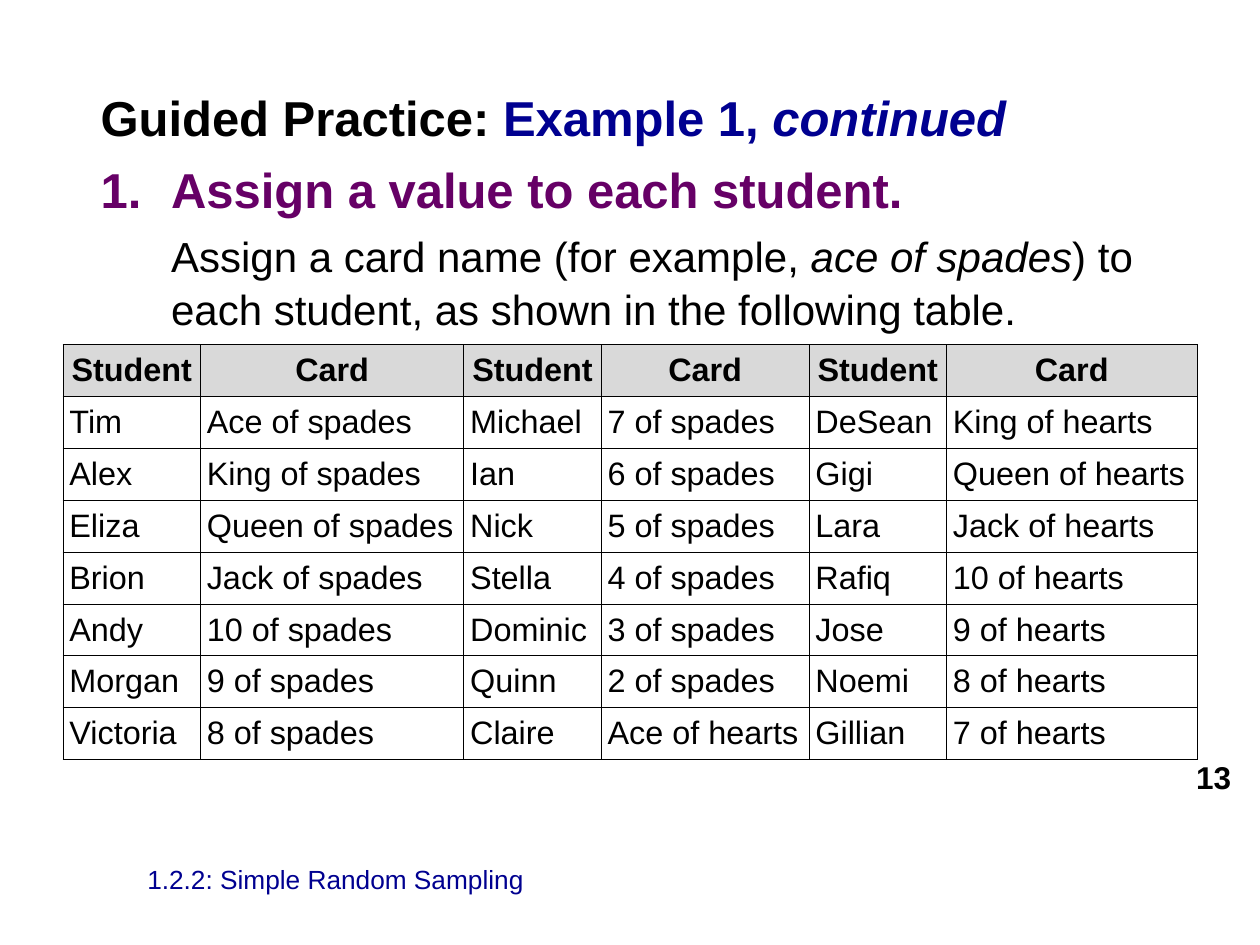
from dataclasses import dataclass

from lxml import etree
from pptx import Presentation
from pptx import util as u
from pptx.dml.color import RGBColor
from pptx.enum import text
from pptx.oxml import ns


@dataclass(frozen=True)
class Theme:
    font: str = "Arial"
    black: str = "000000"
    white: str = "FFFFFF"
    navy: str = "000090"
    purple: str = "660066"
    header_fill: str = "D9D9D9"
    heading_size: float = 28
    body_size: float = 24
    table_size: float = 18.5
    number_size: float = 18
    footer_size: float = 15
    border_width: float = 0.5


THEME = Theme()

COLUMN_WIDTHS = (2.77, 5.31, 2.77, 4.19, 2.77, 5.05)
ROW_HEIGHT = 1.04
CARD_ROWS = [
    ("Student", "Card") * 3,
    ("Tim", "Ace of spades", "Michael", "7 of spades", "DeSean", "King of hearts"),
    ("Alex", "King of spades", "Ian", "6 of spades", "Gigi", "Queen of hearts"),
    ("Eliza", "Queen of spades", "Nick", "5 of spades", "Lara", "Jack of hearts"),
    ("Brion", "Jack of spades", "Stella", "4 of spades", "Rafiq", "10 of hearts"),
    ("Andy", "10 of spades", "Dominic", "3 of spades", "Jose", "9 of hearts"),
    ("Morgan", "9 of spades", "Quinn", "2 of spades", "Noemi", "8 of hearts"),
    ("Victoria", "8 of spades", "Claire", "Ace of hearts", "Gillian", "7 of hearts"),
]


def style_font(font, size, color=THEME.black, bold=False, italic=False):
    font.name = THEME.font
    font.size = u.Pt(size)
    font.bold = bold
    font.italic = italic
    font.color.rgb = RGBColor.from_string(color)


def add_span(para, words, size, **style):
    span = para.add_run()
    span.text = words
    style_font(span.font, size, **style)


def add_box(page, left, top, width, height, anchor=text.MSO_ANCHOR.MIDDLE):
    box = page.shapes.add_textbox(u.Cm(left), u.Cm(top), u.Cm(width), u.Cm(height))
    box.text_frame.word_wrap = True
    box.text_frame.vertical_anchor = anchor
    return box.text_frame


def indent(para, margin, first_line=0.0, numbered=False):
    properties = para._p.get_or_add_pPr()
    properties.set("marL", str(u.Cm(margin)))
    properties.set("indent", str(u.Cm(first_line)))
    if numbered:
        bullet = etree.SubElement(properties, ns.qn("a:buAutoNum"))
        bullet.set("type", "arabicPeriod")


def add_lesson_text(page):
    frame = add_box(page, 1.78, 1.6, 21.82, 5.2, text.MSO_ANCHOR.TOP)
    title = frame.paragraphs[0]
    step, detail = frame.add_paragraph(), frame.add_paragraph()
    indent(step, 1.42, -1.42, numbered=True)
    indent(detail, 1.42)
    for para in (title, step, detail):
        para.line_spacing = 1.04
    for para in (step, detail):
        para.space_before = u.Pt(6)

    heading, body = THEME.heading_size, THEME.body_size
    add_span(title, "Guided Practice: ", heading, bold=True)
    add_span(title, "Example 1, ", heading, color=THEME.navy, bold=True)
    add_span(title, "continued", heading, color=THEME.navy, bold=True, italic=True)
    add_span(step, "Assign a value to each student.", heading,
             color=THEME.purple, bold=True)
    add_span(detail, "Assign a card name (for example, ", body)
    add_span(detail, "ace of spades", body, italic=True)
    add_span(detail, ") to each student, as shown in the following table.", body)


def border_cell(cell):
    """Draw a thin line on each side, placed ahead of the cell's fill."""
    properties = cell._tc.get_or_add_tcPr()
    for position, side in enumerate(("a:lnL", "a:lnR", "a:lnT", "a:lnB")):
        line = etree.Element(ns.qn(side), w=str(u.Pt(THEME.border_width)))
        fill = etree.SubElement(line, ns.qn("a:solidFill"))
        etree.SubElement(fill, ns.qn("a:srgbClr"), val=THEME.black)
        properties.insert(position, line)


def fill_cell(cell, words, is_header):
    cell.fill.solid()
    cell.fill.fore_color.rgb = RGBColor.from_string(
        THEME.header_fill if is_header else THEME.white)
    cell.vertical_anchor = text.MSO_ANCHOR.MIDDLE
    cell.margin_left = cell.margin_right = u.Cm(0.13)
    cell.margin_top = cell.margin_bottom = u.Cm(0.13)
    para = cell.text_frame.paragraphs[0]
    para.alignment = text.PP_ALIGN.CENTER if is_header else text.PP_ALIGN.LEFT
    add_span(para, words, THEME.table_size, bold=is_header)
    border_cell(cell)


def add_card_table(page):
    table = page.shapes.add_table(
        len(CARD_ROWS), len(COLUMN_WIDTHS), u.Cm(1.27), u.Cm(6.95),
        u.Cm(sum(COLUMN_WIDTHS)), u.Cm(ROW_HEIGHT * len(CARD_ROWS))).table
    for column, width in zip(table.columns, COLUMN_WIDTHS):
        column.width = u.Cm(width)
    for row_index, words_in_row in enumerate(CARD_ROWS):
        table.rows[row_index].height = u.Cm(ROW_HEIGHT)
        for column_index, words in enumerate(words_in_row):
            fill_cell(table.cell(row_index, column_index), words, row_index == 0)


def add_page_number(page):
    para = add_box(page, 23.04, 15.27, 2.03, 0.79).paragraphs[0]
    para.alignment = text.PP_ALIGN.RIGHT
    add_span(para, "13", THEME.number_size, bold=True)


def add_footer(page):
    para = add_box(page, 2.72, 17.35, 15.95, 0.74).paragraphs[0]
    add_span(para, "1.2.2: Simple Random Sampling", THEME.footer_size,
             color=THEME.navy)


def main():
    deck = Presentation()
    deck.slide_width, deck.slide_height = u.Cm(25.4), u.Cm(19.05)
    page = deck.slides.add_slide(deck.slide_layouts[6])
    add_lesson_text(page)
    add_page_number(page)
    add_footer(page)
    add_card_table(page)
    deck.save("out.pptx")


if __name__ == "__main__":
    main()
